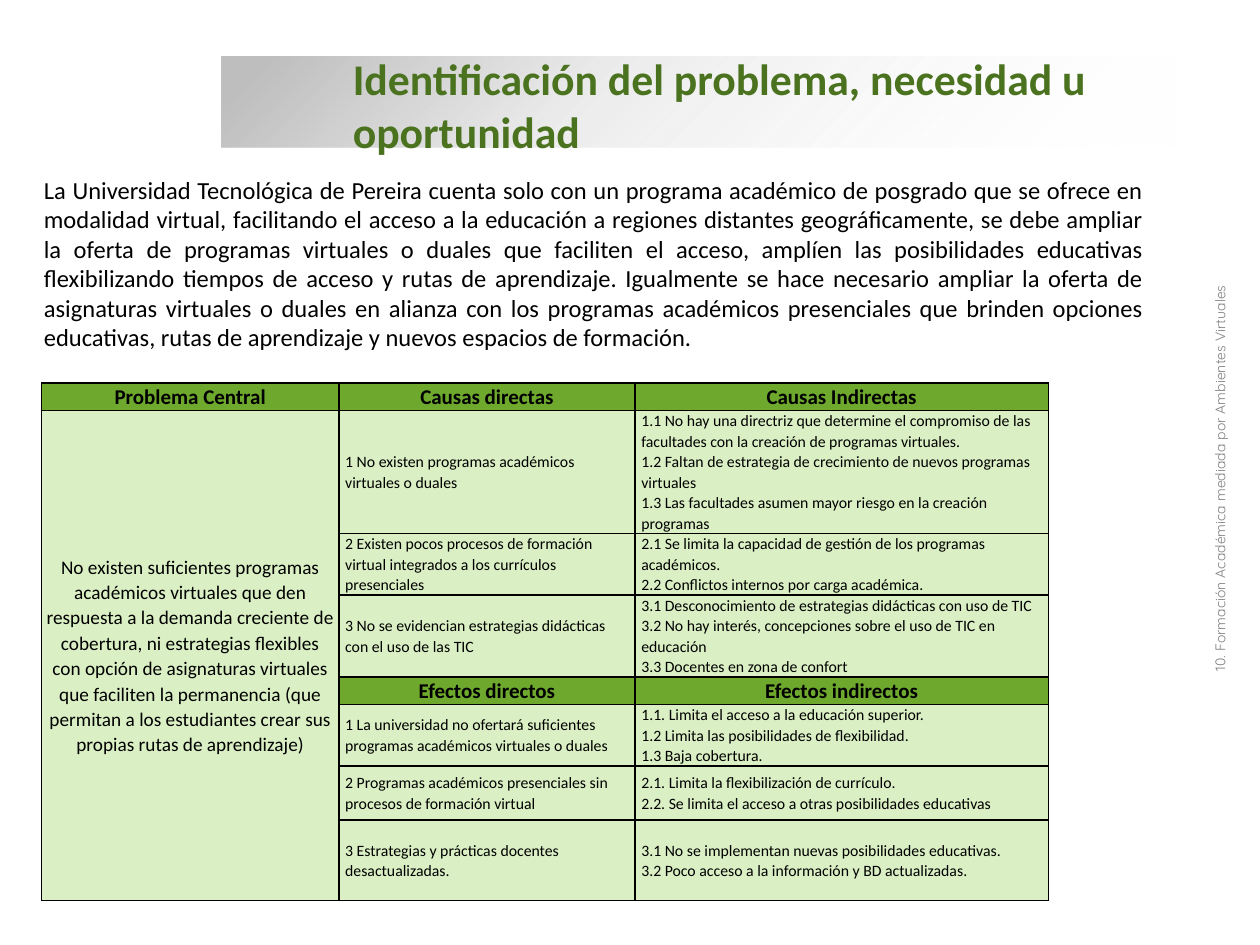
"""Build the slide on the problem, its causes and its effects."""
from dataclasses import dataclass

from lxml import etree
from pptx import Presentation
from pptx.dml.color import RGBColor
from pptx.enum.shapes import MSO_SHAPE
from pptx.enum.text import MSO_ANCHOR, MSO_AUTO_SIZE, PP_ALIGN
from pptx.oxml import parse_xml
from pptx.oxml.ns import nsdecls, qn
from pptx.util import Inches, Pt

RECTANGLE = MSO_SHAPE.RECTANGLE
MIDDLE, TOP = MSO_ANCHOR.MIDDLE, MSO_ANCHOR.TOP
LEFT, CENTER, JUSTIFY = PP_ALIGN.LEFT, PP_ALIGN.CENTER, PP_ALIGN.JUSTIFY
NO_AUTOFIT = MSO_AUTO_SIZE.NONE
TITLE_ONLY = 5
GRID_COLUMNS, GRID_ROWS = 100, 75
SLIDE_WIDTH, SLIDE_HEIGHT = Inches(10), Inches(7.5)


@dataclass(frozen=True)
class TextStyle:
    size: float
    color: str = "000000"
    bold: bool = False
    align: PP_ALIGN = LEFT
    font: str = "Calibri"
    line_spacing: float = 1.0


@dataclass(frozen=True)
class Theme:
    header_fill: str = "6EA92D"
    cell_fill: str = "DAEFC3"
    border: str = "000000"
    border_width: float = 1
    banner_stops: tuple = ((5, "BFBFBF", 100), (37, "BFBFBF", 31), (100, "FFFFFF", 0))
    title: TextStyle = TextStyle(25, "4B731F", True)
    body: TextStyle = TextStyle(14, align=JUSTIFY)
    side: TextStyle = TextStyle(8, "808080", align=CENTER, font="Quicksand")
    header: TextStyle = TextStyle(12, bold=True, align=CENTER, line_spacing=1.07)
    problem: TextStyle = TextStyle(11, align=CENTER, line_spacing=1.07)
    cell: TextStyle = TextStyle(9, line_spacing=1.07)


@dataclass(frozen=True)
class Box:
    """A place counted in grid columns and rows."""
    column: float
    row: float
    width: float
    height: float

    def lengths(self) -> tuple:
        """Return left, top, width and height as slide lengths."""
        return (across(self.column), down(self.row), across(self.width), down(self.height))


@dataclass(frozen=True)
class TableRow:
    height: float
    direct: str
    indirect: tuple
    is_header: bool = False


THEME = Theme()
BANNER = Box(17.6, 4.5, 76.1, 7.2)
TITLE = Box(27, 3.4, 67.5, 9.8)
BODY = Box(2.5, 13.4, 89.3, 15.1)
SIDE = Box(73.3, 36.1, 48.4, 3.7)
TABLE = Box(3.3, 30.4, 80, 40.2)
TABLE_COLUMNS = (23.6, 23.5, 32.8)

TITLE_TEXT = "Identificación del problema, necesidad u oportunidad"
BODY_TEXT = (
    "La Universidad Tecnológica de Pereira cuenta solo con un programa académico de posgrado "
    "que se ofrece en modalidad virtual, facilitando el acceso a la educación a regiones "
    "distantes geográficamente, se debe ampliar la oferta de programas virtuales o duales que "
    "faciliten el acceso, amplíen las posibilidades educativas flexibilizando tiempos de acceso "
    "y rutas de aprendizaje. Igualmente se hace necesario ampliar la oferta de asignaturas "
    "virtuales o duales en alianza con los programas académicos presenciales que brinden "
    "opciones educativas, rutas de aprendizaje y nuevos espacios de formación."
)
SIDE_TEXT = "10. Formación Académica mediada por Ambientes Virtuales"
PROBLEM_HEADER = "Problema Central"
PROBLEM_TEXT = (
    "No existen suficientes programas académicos virtuales que den respuesta a la demanda "
    "creciente de cobertura, ni estrategias flexibles con opción de asignaturas virtuales que "
    "faciliten la permanencia (que permitan a los estudiantes crear sus propias rutas de "
    "aprendizaje)"
)
TABLE_ROWS = (
    TableRow(1.9, "Causas directas", ("Causas Indirectas",), True),
    TableRow(8.5, "1 No existen programas académicos virtuales o duales", (
        "1.1 No hay una directriz que determine el compromiso de las facultades con la "
        "creación de programas virtuales.",
        "1.2 Faltan de estrategia de crecimiento de nuevos programas virtuales",
        "1.3 Las facultades asumen mayor riesgo en la creación programas")),
    TableRow(4.6, "2 Existen pocos procesos de formación virtual integrados a los currículos "
             "presenciales", (
                 "2.1 Se limita la capacidad de gestión de los programas académicos.",
                 "2.2 Conflictos internos por carga académica.")),
    TableRow(5.8, "3 No se evidencian estrategias didácticas con el uso de las TIC", (
        "3.1 Desconocimiento de estrategias didácticas con uso de TIC",
        "3.2 No hay interés, concepciones sobre el uso de TIC en educación",
        "3.3 Docentes en zona de confort")),
    TableRow(1.9, "Efectos directos", ("Efectos indirectos",), True),
    TableRow(4.6, "1 La universidad no ofertará suficientes programas académicos virtuales o "
             "duales", (
                 "1.1. Limita el acceso a la educación superior.",
                 "1.2 Limita las posibilidades de flexibilidad.",
                 "1.3 Baja cobertura.")),
    TableRow(4.3, "2 Programas académicos presenciales sin procesos de formación virtual", (
        "2.1. Limita la flexibilización de currículo.",
        "2.2. Se limita el acceso a otras posibilidades educativas")),
    TableRow(6.4, "3 Estrategias y prácticas docentes desactualizadas.", (
        "3.1 No se implementan nuevas posibilidades educativas.",
        "3.2 Poco acceso a la información y BD actualizadas.")),
)


def across(columns: float) -> int:
    """Turn grid columns into a length."""
    return round(SLIDE_WIDTH * columns / GRID_COLUMNS)


def down(rows: float) -> int:
    """Turn grid rows into a length."""
    return round(SLIDE_HEIGHT * rows / GRID_ROWS)


def write(text_frame, lines: tuple, style: TextStyle) -> None:
    """Write lines, parted by line breaks, into the first paragraph."""
    paragraph = text_frame.paragraphs[0]
    paragraph.alignment = style.align
    paragraph.line_spacing = style.line_spacing
    for index, line in enumerate(lines):
        if index:
            paragraph.add_line_break()
        run = paragraph.add_run()
        run.text = line
        run.font.name = style.font
        run.font.size = Pt(style.size)
        run.font.bold = style.bold
        run.font.color.rgb = RGBColor.from_string(style.color)


def fill_text_shape(shape, box: Box, text: str, style: TextStyle, anchor: MSO_ANCHOR) -> None:
    """Place a text shape and write its text."""
    shape.left, shape.top, shape.width, shape.height = box.lengths()
    text_frame = shape.text_frame
    text_frame.word_wrap = True
    text_frame.auto_size = NO_AUTOFIT
    text_frame.vertical_anchor = anchor
    write(text_frame, (text,), style)


def add_banner(slide):
    """Draw the fading band that lies behind the title."""
    banner = slide.shapes.add_shape(RECTANGLE, *BANNER.lengths())
    banner.shadow.inherit = False
    banner.line.fill.background()
    stops = "".join(
        f'<a:gs pos="{position * 1000}"><a:srgbClr val="{color}">'
        f'<a:alpha val="{alpha * 1000}"/></a:srgbClr></a:gs>'
        for position, color, alpha in THEME.banner_stops)
    gradient = parse_xml(f'<a:gradFill {nsdecls("a")} rotWithShape="1"><a:gsLst>{stops}</a:gsLst>'
                         '<a:lin ang="2700000" scaled="0"/></a:gradFill>')
    banner.element.spPr.find(qn("a:prstGeom")).addnext(gradient)
    return banner


def format_cell(cell, lines: tuple, style: TextStyle, fill: str) -> None:
    """Give a table cell its borders, fill and text."""
    properties = cell._tc.get_or_add_tcPr()
    for edge in ("a:lnL", "a:lnR", "a:lnT", "a:lnB"):
        line = etree.SubElement(properties, qn(edge), w=str(Pt(THEME.border_width)))
        solid = etree.SubElement(line, qn("a:solidFill"))
        etree.SubElement(solid, qn("a:srgbClr"), val=THEME.border)
    cell.fill.solid()
    cell.fill.fore_color.rgb = RGBColor.from_string(fill)
    cell.vertical_anchor = MIDDLE
    cell.margin_left = cell.margin_right = Inches(0.04 if style.align == CENTER else 0.05)
    cell.margin_top = cell.margin_bottom = 0
    write(cell.text_frame, lines, style)


def add_problem_table(slide) -> None:
    """Draw the table of the problem, its causes and its effects."""
    table = slide.shapes.add_table(len(TABLE_ROWS), len(TABLE_COLUMNS), *TABLE.lengths()).table
    table.first_row = table.horz_banding = False
    for column, width in zip(table.columns, TABLE_COLUMNS):
        column.width = across(width)
    problem_lines = {0: (PROBLEM_HEADER,), 1: (PROBLEM_TEXT,)}
    for index, row in enumerate(TABLE_ROWS):
        table.rows[index].height = down(row.height)
        look = (THEME.header, THEME.header_fill) if row.is_header else (THEME.cell, THEME.cell_fill)
        problem_look = (THEME.problem, THEME.cell_fill) if index else look
        format_cell(table.cell(index, 0), problem_lines.get(index, ()), *problem_look)
        format_cell(table.cell(index, 1), (row.direct,), *look)
        format_cell(table.cell(index, 2), row.indirect, *look)
    table.cell(1, 0).merge(table.cell(len(TABLE_ROWS) - 1, 0))


def main() -> None:
    """Build and save the presentation."""
    presentation = Presentation()
    presentation.slide_width, presentation.slide_height = SLIDE_WIDTH, SLIDE_HEIGHT
    slide = presentation.slides.add_slide(presentation.slide_layouts[TITLE_ONLY])
    title = slide.shapes.title
    fill_text_shape(title, TITLE, TITLE_TEXT, THEME.title, MIDDLE)
    title.element.addprevious(add_banner(slide).element)
    body = slide.shapes.add_textbox(*BODY.lengths())
    fill_text_shape(body, BODY, BODY_TEXT, THEME.body, TOP)
    add_problem_table(slide)
    side = slide.shapes.add_textbox(*SIDE.lengths())
    fill_text_shape(side, SIDE, SIDE_TEXT, THEME.side, TOP)
    side.rotation = 270
    presentation.save("out.pptx")


if __name__ == "__main__":
    main()
